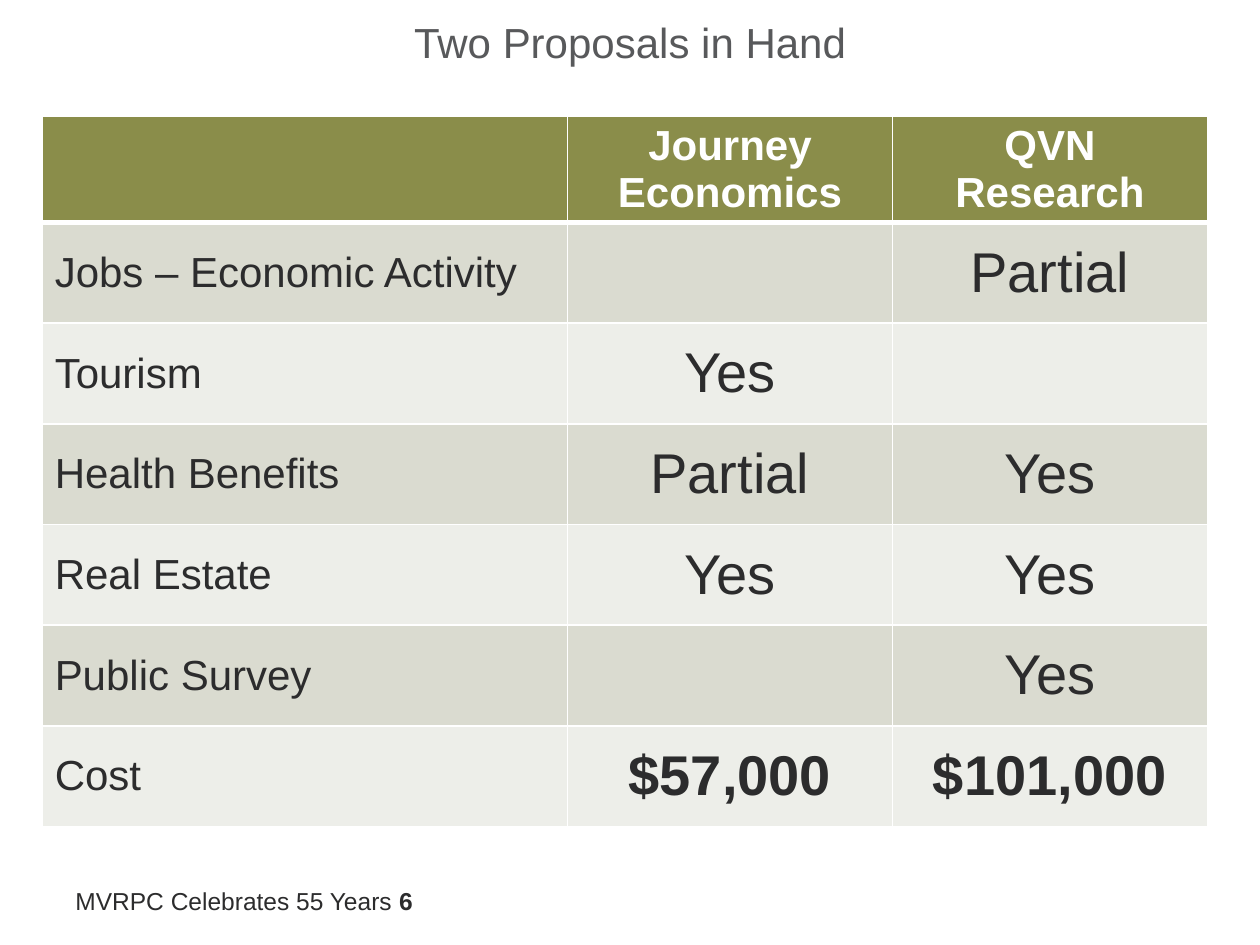
from lxml.etree import SubElement
from pptx import Presentation
from pptx.dml.color import RGBColor
from pptx.enum.text import MSO_ANCHOR, MSO_AUTO_SIZE, PP_ALIGN
from pptx.oxml.ns import qn
from pptx.util import Cm, Pt

WHITE = RGBColor(0xFF, 0xFF, 0xFF)
INK = RGBColor(0x2C, 0x2C, 0x2D)
GREY = RGBColor(0x58, 0x59, 0x5B)
OLIVE = RGBColor(0x8A, 0x8D, 0x4A)
BAND_DARK = RGBColor(0xDA, 0xDB, 0xD0)
BAND_LIGHT = RGBColor(0xED, 0xEE, 0xE9)

COLUMN_WIDTHS = (10.59, 6.55, 6.35)
PROPOSALS = (
    ("", "Journey Economics", "QVN Research"),
    ("Jobs – Economic Activity", "", "Partial"),
    ("Tourism", "Yes", ""),
    ("Health Benefits", "Partial", "Yes"),
    ("Real Estate", "Yes", "Yes"),
    ("Public Survey", "", "Yes"),
    ("Cost", "$57,000", "$101,000"),
)


def add_span(para, text, size, color, bold=False):
    span = para.add_run()
    span.text = text
    span.font.name = "Arial"
    span.font.size = Pt(size)
    span.font.bold = bold
    span.font.color.rgb = color


def set_borders(cell, bottom_width):
    properties = cell._tc.get_or_add_tcPr()
    widths = {"a:lnL": 1, "a:lnR": 1, "a:lnT": 1, "a:lnB": bottom_width}
    for position, (tag, width) in enumerate(widths.items()):
        line = SubElement(properties, qn(tag), w=str(Pt(width)))
        fill = SubElement(line, qn("a:solidFill"))
        SubElement(fill, qn("a:srgbClr"), val=str(WHITE))
        properties.insert(position, line)


def fill_title(page, left, top, width, height):
    title = page.shapes.title
    title.left, title.top, title.width, title.height = left, top, width, height
    frame = title.text_frame
    frame.auto_size = MSO_AUTO_SIZE.NONE
    frame.vertical_anchor = MSO_ANCHOR.MIDDLE
    para = frame.paragraphs[0]
    para.alignment = PP_ALIGN.CENTER
    add_span(para, "Two Proposals in Hand", 24, GREY)


def fill_cell(cell, text, row, column):
    header = row == 0
    cost = row == len(PROPOSALS) - 1
    cell.fill.solid()
    if header:
        cell.fill.fore_color.rgb = OLIVE
    else:
        cell.fill.fore_color.rgb = BAND_DARK if row % 2 else BAND_LIGHT
        cell.vertical_anchor = MSO_ANCHOR.MIDDLE
    set_borders(cell, 3 if header else 1)
    if text:
        para = cell.text_frame.paragraphs[0]
        para.alignment = PP_ALIGN.CENTER if column else PP_ALIGN.LEFT
        size = 24 if header or column == 0 else 32
        color = WHITE if header else INK
        add_span(para, text, size, color, header or (cost and column > 0))


def add_proposal_table(page, left, top, width, height):
    table = page.shapes.add_table(
        len(PROPOSALS), len(COLUMN_WIDTHS), left, top, width, height
    ).table
    table.horz_banding = False
    for column, column_width in zip(table.columns, COLUMN_WIDTHS):
        column.width = Cm(column_width)
    for row, texts in enumerate(PROPOSALS):
        for column, text in enumerate(texts):
            fill_cell(table.cell(row, column), text, row, column)


def add_footer(page, left, top, width, height):
    box = page.shapes.add_textbox(left, top, width, height)
    frame = box.text_frame
    frame.word_wrap = True
    frame.vertical_anchor = MSO_ANCHOR.MIDDLE
    para = frame.paragraphs[0]
    add_span(para, "MVRPC Celebrates 55 Years ", 14, INK)
    add_span(para, "6", 14, INK, bold=True)


def main():
    deck = Presentation()
    deck.slide_width, deck.slide_height = Cm(25.4), Cm(19.05)
    page = deck.slides.add_slide(deck.slide_layouts[5])
    fill_title(page, Cm(1.27), Cm(0.2), Cm(22.86), Cm(1.27))
    add_proposal_table(
        page, Cm(0.85), Cm(2.34), Cm(sum(COLUMN_WIDTHS)), Cm(2.03 * len(PROPOSALS))
    )
    add_footer(page, Cm(1.27), Cm(17.65), Cm(15.44), Cm(1.02))
    deck.save("out.pptx")


if __name__ == "__main__":
    main()
